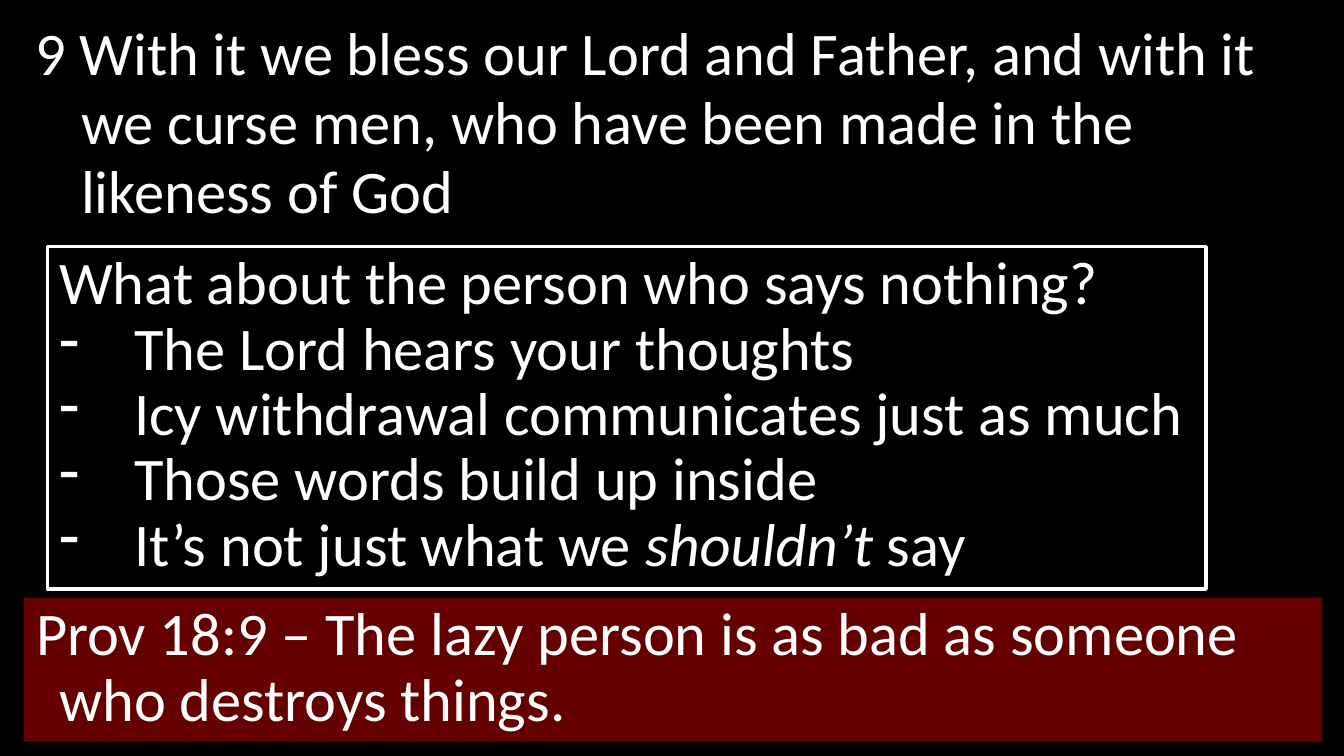
from dataclasses import dataclass
from typing import Optional

from lxml.etree import SubElement
from pptx import Presentation
from pptx.dml.color import RGBColor as Color
from pptx.enum.shapes import MSO_SHAPE as Shape
from pptx.enum.text import MSO_ANCHOR as Anchor, MSO_AUTO_SIZE as Fit, PP_ALIGN as Align
from pptx.oxml.ns import qn
from pptx.util import Inches, Pt


@dataclass(frozen=True)
class Theme:
    font: str = "Calibri"
    size: int = 36
    back: Color = Color(0, 0, 0)
    ink: Color = Color(255, 255, 255)
    red: Color = Color(0x64, 0, 0)
    edge: float = 2


@dataclass(frozen=True)
class Line:
    text: str  # stars enclose italic words
    hang: float = 0.19
    mark: str = ""
    space: float = 0.9


@dataclass(frozen=True)
class Panel:
    left: float
    top: float
    width: float
    height: float
    fill: Color
    edge: Optional[Color]
    lines: list[Line]


THEME = Theme()
VERSE = Line(
    "9 With it we bless our Lord and Father, and with it we curse men, "
    "who have been made in the likeness of God", hang=0.38, space=0.95)
POINTS = [
    "The Lord hears your thoughts",
    "Icy withdrawal communicates just as much",
    "Those words build up inside",
    "It’s not just what we *shouldn’t* say",
]
PANELS = [
    Panel(0.39, 2.04, 9.58, 2.83, THEME.back, THEME.ink,
          [Line("What about the person who says nothing?")]
          + [Line(point, 0.62, "-") for point in POINTS]),
    Panel(0.2, 4.94, 10.73, 1.19, THEME.red, None,
          [Line("Prov 18:9 – The lazy person is as bad as someone "
                "who destroys things.")]),
]


def write(frame, lines: list[Line]) -> None:
    """Fill a text frame with hanging paragraphs."""
    frame.word_wrap = True
    frame.vertical_anchor = Anchor.TOP
    for i, line in enumerate(lines):
        para = frame.paragraphs[0] if i == 0 else frame.add_paragraph()
        para.alignment = Align.LEFT
        para.line_spacing = line.space
        para.space_before = Pt(0)
        props = para._p.get_or_add_pPr()
        props.set("marL", str(Inches(line.hang)))
        props.set("indent", str(-Inches(line.hang)))
        if line.mark:
            SubElement(props, qn("a:buChar"), char=line.mark)
        else:
            SubElement(props, qn("a:buNone"))
        for j, part in enumerate(line.text.split("*")):
            run = para.add_run()
            run.text = part
            font = run.font
            font.name, font.size = THEME.font, Pt(THEME.size)
            font.color.rgb = THEME.ink
            if j % 2:
                font.italic = True


def draw(slide, panel: Panel) -> None:
    box = slide.shapes.add_shape(
        Shape.ROUNDED_RECTANGLE, Inches(panel.left), Inches(panel.top),
        Inches(panel.width), Inches(panel.height))
    box.adjustments[0] = 0
    box.shadow.inherit = False
    box.fill.solid()
    box.fill.fore_color.rgb = panel.fill
    if panel.edge is None:
        box.line.fill.background()
    else:
        box.line.color.rgb = panel.edge
        box.line.width = Pt(THEME.edge)
    write(box.text_frame, panel.lines)
    box.text_frame.auto_size = Fit.SHAPE_TO_FIT_TEXT


def main() -> None:
    deck = Presentation()
    deck.slide_width, deck.slide_height = Inches(11.11), Inches(6.25)
    slide = deck.slides.add_slide(deck.slide_layouts[1])
    slide.background.fill.solid()
    slide.background.fill.fore_color.rgb = THEME.back

    title = slide.shapes.title.element
    title.getparent().remove(title)
    body = slide.placeholders[1]
    body.left, body.top = Inches(0.19), Inches(0.12)
    body.width, body.height = Inches(10.74), Inches(5.29)
    write(body.text_frame, [VERSE])
    body.text_frame.auto_size = Fit.NONE

    for panel in PANELS:
        draw(slide, panel)
    deck.save("out.pptx")


if __name__ == "__main__":
    main()
